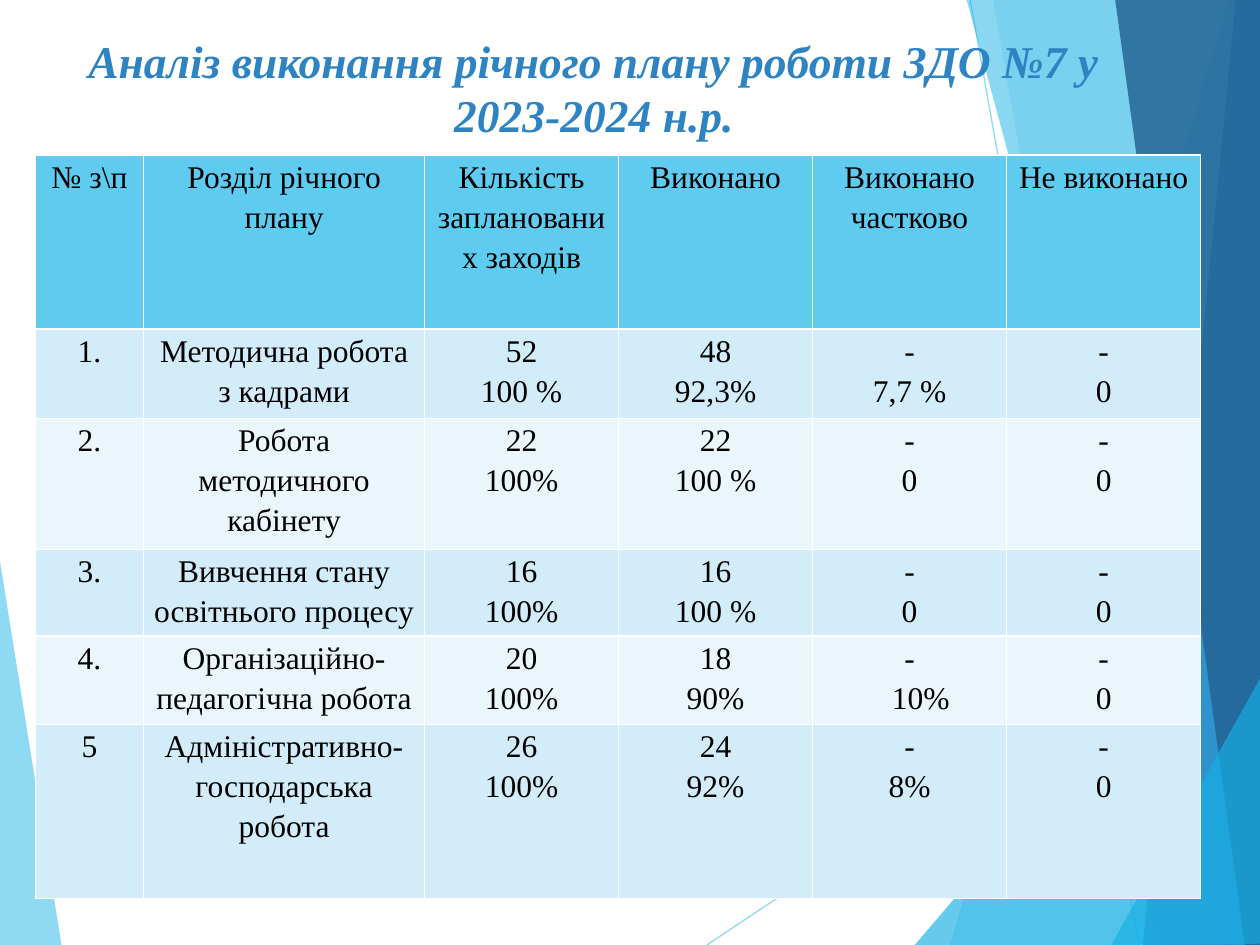
from lxml import etree
from pptx import Presentation
from pptx.dml.color import RGBColor
from pptx.enum.shapes import MSO_CONNECTOR
from pptx.enum.text import MSO_ANCHOR, MSO_AUTO_SIZE, PP_ALIGN
from pptx.oxml.ns import qn
from pptx.util import Inches, Pt

CENTER, LEFT = PP_ALIGN.CENTER, PP_ALIGN.LEFT
TOP = MSO_ANCHOR.TOP
NO_AUTOFIT = MSO_AUTO_SIZE.NONE
STRAIGHT = MSO_CONNECTOR.STRAIGHT
FONT = "Times New Roman"
SKY, CYAN, BLUE, NAVY = "5FCBEF", "17B0E4", "2E83C3", "226292"
WHITE, BLACK = "FFFFFF", "000000"
BANDS = ("D2ECF9", "EAF6FC")

LEFT_WEDGE = ([(-0.01, 4.39), (0.49, 7.51), (-0.01, 7.5)], SKY, 70)
RAYS = [((5.61, 7.5), (10.01, 4.57)), ((7.7, 0), (9.04, 7.5))]
RIGHT_FACETS = [
    ([(9.75, 0), (7.54, 7.5), (10.02, 7.51), (10.01, 0.01)], SKY, 36),
    ([(7.88, -0.01), (9.19, 7.5), (10.01, 7.5), (10.01, -0.01)], SKY, 20),
    ([(7.26, 7.5), (10, 4.29), (10.01, 7.5)], CYAN, 66),
    ([(7.67, -0.01), (9.7, 7.5), (10.01, 7.49), (10.01, -0.01)], CYAN, 50),
    ([(9.81, -0.01), (9.07, 7.5), (10.01, 7.5), (10, -0.01)], BLUE, 70),
    ([(8.85, -0.01), (9.88, 7.5), (10.02, 7.5), (10, -0.01)], NAVY, 82),
    ([(8.82, 7.5), (10.02, 5.35), (10.02, 7.49)], CYAN, 66),
]

TITLE = "Аналіз виконання річного плану роботи ЗДО №7 у 2023-2024 н.р."
COLUMN_WIDTHS = [0.86, 2.23] + [1.54] * 4
ROW_HEIGHTS = [1.38, 0.71, 1.04, 0.69, 0.7, 1.38]
ROWS = [
    ["№ з\\п", "Розділ річного плану", "Кількість\nзапланованих заходів",
     "Виконано", "Виконано частково", "Не виконано"],
    ["1.", "Методична робота з кадрами", "52\n100 %", "48\n92,3%", "-\n7,7 %", "-\n0"],
    ["2.", "Робота методичного кабінету", "22\n100%", "22\n100 %", "-\n0", "-\n0"],
    ["3.", "Вивчення стану освітнього процесу", "16\n100%", "16\n100 %", "-\n0", "-\n0"],
    ["4.", "Організаційно-педагогічна робота", "20\n100%", "18\n90%", "-\n10%", "-\n0"],
    ["5", "Адміністративно-господарська робота", "26\n100%", "24\n92%", "-\n8%", "-\n0"],
]


def rgb(color):
    """Turn a hex string into a colour."""
    return RGBColor.from_string(color)


def set_alpha(sp, percent):
    """Set the opacity of the shape's first solid colour."""
    clr = next(sp.element.spPr.iter(qn("a:srgbClr")))
    etree.SubElement(clr, qn("a:alpha"), val=str(percent * 1000))


def add_facet(s, points, color, opacity):
    """Add a translucent polygon with corners in inches."""
    corners = [(Inches(x), Inches(y)) for x, y in points]
    builder = s.shapes.build_freeform(*corners[0])
    builder.add_line_segments(corners[1:], close=True)
    sp = builder.convert_to_shape()
    sp.shadow.inherit = False
    sp.fill.solid()
    sp.fill.fore_color.rgb = rgb(color)
    sp.line.fill.background()
    set_alpha(sp, opacity)


def add_ray(s, start, end):
    """Add a thin translucent line between two points in inches."""
    ray = s.shapes.add_connector(STRAIGHT, *map(Inches, start + end))
    ray.line.color.rgb = rgb(SKY)
    ray.line.width = Pt(0.75)
    set_alpha(ray, 70)
    etree.SubElement(ray.element.spPr, qn("a:effectLst"))


def style_paragraph(p, size, color, bold=False, italic=False):
    """Centre a paragraph and set its font."""
    p.alignment = CENTER
    p.font.name, p.font.size = FONT, Pt(size)
    p.font.bold, p.font.italic = bold, italic
    p.font.color.rgb = rgb(color)


def add_title(s):
    """Fill the title placeholder and bring it in front of the facets."""
    title = s.shapes.title
    title.left, title.top = Inches(0.59), Inches(0.21)
    title.width, title.height = Inches(8.25), Inches(0.53)
    s.shapes.element.append(title.element)
    tf = title.text_frame
    tf.text = TITLE
    tf.word_wrap = True
    tf.auto_size = NO_AUTOFIT
    tf.vertical_anchor = TOP
    style_paragraph(tf.paragraphs[0], 26, BLUE, bold=True, italic=True)


def set_borders(cell):
    """Draw thin white borders on all four sides of a cell."""
    tc_pr = cell._tc.get_or_add_tcPr()
    for side in "LRTB":
        ln = etree.SubElement(tc_pr, qn(f"a:ln{side}"), w=str(Pt(1)))
        fill = etree.SubElement(ln, qn("a:solidFill"))
        etree.SubElement(fill, qn("a:srgbClr"), val=WHITE)


def fill_cell(cell, text, color):
    """Write and format one table cell."""
    set_borders(cell)
    cell.fill.solid()
    cell.fill.fore_color.rgb = rgb(color)
    cell.margin_left = cell.margin_right = Inches(0.07)
    cell.margin_top = cell.margin_bottom = 0
    cell.text_frame.text = text
    for p in cell.text_frame.paragraphs:
        style_paragraph(p, 18, BLACK)
        p.line_spacing = 1.15


def add_plan_table(s):
    """Add the table of planned and completed activities."""
    frame = s.shapes.add_table(
        len(ROWS), len(COLUMN_WIDTHS), Inches(0.28), Inches(1.23),
        Inches(sum(COLUMN_WIDTHS)), Inches(sum(ROW_HEIGHTS)))
    table = frame.table
    table.first_row = table.horz_banding = False
    for column, width in zip(table.columns, COLUMN_WIDTHS):
        column.width = Inches(width)
    for i, (texts, height) in enumerate(zip(ROWS, ROW_HEIGHTS)):
        table.rows[i].height = Inches(height)
        color = BANDS[(i - 1) % 2] if i else SKY
        for j, text in enumerate(texts):
            fill_cell(table.cell(i, j), text, color)
    indented = table.cell(4, 4).text_frame.paragraphs[1]
    indented.alignment = LEFT
    indented._p.get_or_add_pPr().set("marL", str(Inches(0.56)))


def main():
    """Build the slide and save it."""
    prs = Presentation()
    prs.slide_width, prs.slide_height = Inches(10), Inches(7.5)
    s = prs.slides.add_slide(prs.slide_layouts[5])
    add_facet(s, *LEFT_WEDGE)
    for start, end in RAYS:
        add_ray(s, start, end)
    for facet in RIGHT_FACETS:
        add_facet(s, *facet)
    add_title(s)
    add_plan_table(s)
    prs.save("out.pptx")


if __name__ == "__main__":
    main()
